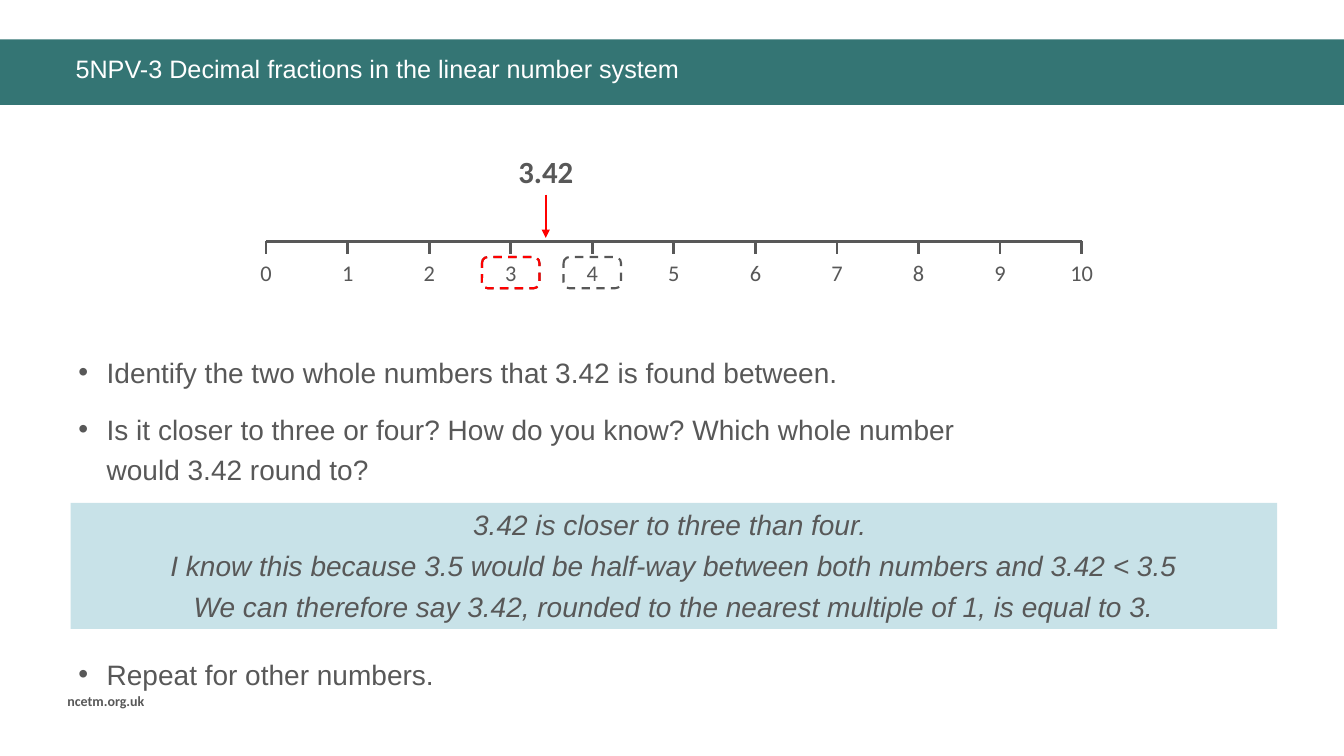
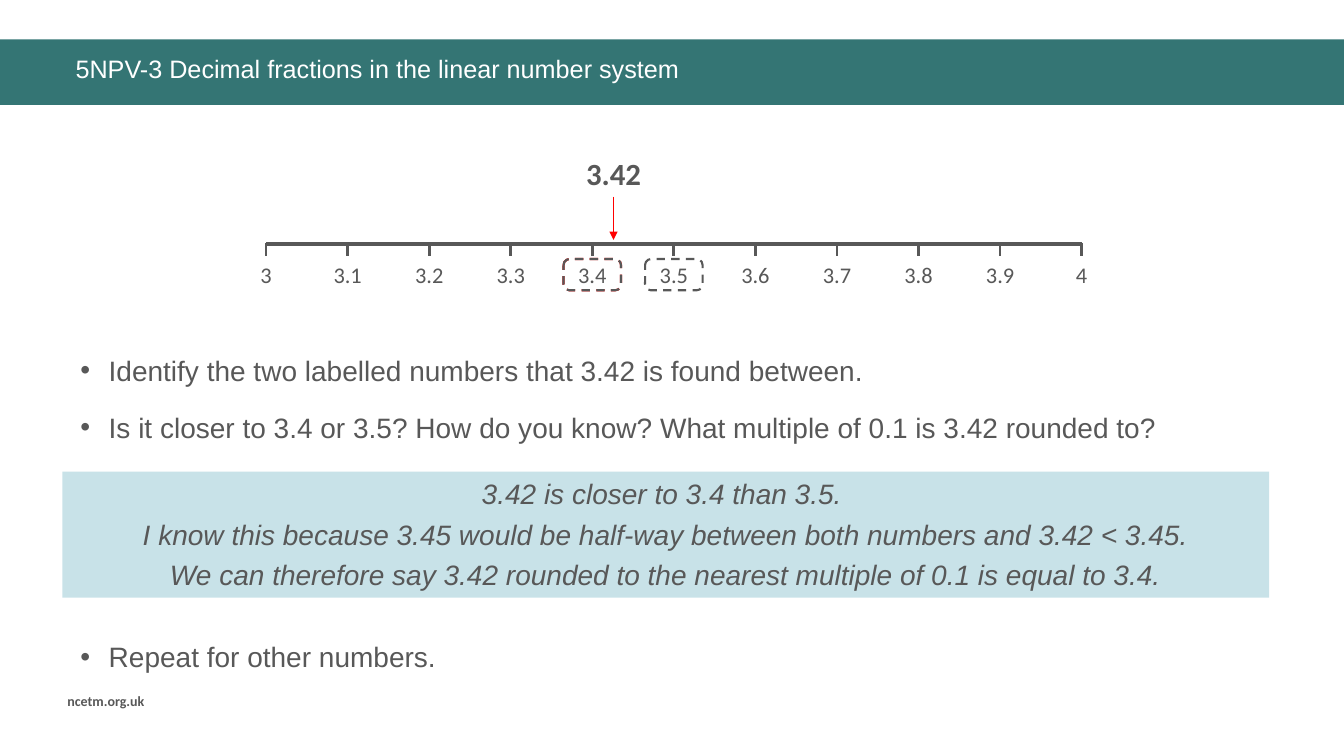
from dataclasses import dataclass

from lxml.etree import SubElement
from pptx import Presentation
from pptx.dml.color import RGBColor
from pptx.enum.dml import MSO_LINE
from pptx.enum.shapes import MSO_CONNECTOR, MSO_SHAPE
from pptx.enum.text import MSO_ANCHOR, PP_ALIGN
from pptx.oxml.ns import qn
from pptx.util import Inches, Pt


@dataclass(frozen=True)
class Theme:
    teal: str = "347574"
    pale: str = "C8E2E8"
    grey: str = "585858"
    red: str = "FF0000"
    white: str = "FFFFFF"
    sans: str = "Arial"
    label: str = "Calibri"
    title_size: int = 18
    body_size: int = 20
    pointer_size: int = 22
    tick_size: int = 16
    footer_size: int = 10


@dataclass(frozen=True)
class Box:
    """An area in inches; the areas inside it are given in percent of it."""
    left: float
    top: float
    width: float
    height: float

    def x(self, percent):
        return self.left + self.width * percent / 100

    def y(self, percent):
        return self.top + self.height * percent / 100

    def area(self, left, top, width, height):
        return Box(self.x(left), self.y(top),
                   self.width * width / 100, self.height * height / 100)

    def emu(self):
        return [Inches(v) for v in (self.left, self.top, self.width, self.height)]


THEME = Theme()
SLIDE = Box(0, 0, 13.33, 7.5)
TITLE = "5NPV-3 Decimal fractions in the linear number system"
FOOTER = "ncetm.org.uk"


def rgb(code):
    return RGBColor.from_string(code)


def write(frame, text, *, first=False, size=THEME.body_size, font=THEME.sans,
          color=THEME.grey, bold=False, italic=False, align=PP_ALIGN.LEFT,
          spacing=1.0, before=0, after=0, bullet=False):
    para = frame.paragraphs[0] if first else frame.add_paragraph()
    para.alignment = align
    para.line_spacing = spacing
    para.space_before = Pt(0 if first else before)
    para.space_after = Pt(after)
    if bullet:
        properties = para._p.get_or_add_pPr()
        properties.set("marL", str(Inches(0.28)))
        properties.set("indent", str(-Inches(0.28)))
        tint = SubElement(properties, qn("a:buClr"))
        SubElement(tint, qn("a:srgbClr"), val=THEME.grey)
        SubElement(properties, qn("a:buFont"), typeface=THEME.sans)
        SubElement(properties, qn("a:buChar"), char="•")
    span = para.add_run()
    span.text = text
    span.font.name, span.font.size = font, Pt(size)
    span.font.bold, span.font.italic = bold, italic
    span.font.color.rgb = rgb(color)


def text_frame(page, box):
    frame = page.shapes.add_textbox(*box.emu()).text_frame
    frame.word_wrap = True
    return frame


def add_panel(page, box, fill):
    panel = page.shapes.add_shape(MSO_SHAPE.RECTANGLE, *box.emu())
    panel.shadow.inherit = False
    panel.fill.solid()
    panel.fill.fore_color.rgb = rgb(fill)
    panel.line.fill.background()
    return panel


def add_line(page, start, end, color, width, arrow=False):
    points = [Inches(v) for v in (*start, *end)]
    line = page.shapes.add_connector(MSO_CONNECTOR.STRAIGHT, *points)
    line.line.color.rgb = rgb(color)
    line.line.width = Pt(width)
    properties = line._element.spPr
    if arrow:
        SubElement(properties.find(qn("a:ln")), qn("a:tailEnd"), type="triangle")
    SubElement(properties, qn("a:effectLst"))


def add_marker(page, box, color):
    marker = page.shapes.add_shape(MSO_SHAPE.ROUNDED_RECTANGLE, *box.emu())
    marker.adjustments[0] = 0.19
    marker.shadow.inherit = False
    marker.fill.background()
    marker.line.color.rgb = rgb(color)
    marker.line.width = Pt(1.5)
    marker.line.dash_style = MSO_LINE.DASH


def add_frame(page, box):
    """Title band and footer, the same on every slide."""
    add_panel(page, box.area(0, 5.2, 100, 8.67), THEME.teal)
    write(text_frame(page, box.area(4.88, 6.8, 92.4, 6.27)), TITLE, first=True,
          size=THEME.title_size, color=THEME.white, spacing=0.9)
    write(text_frame(page, box.area(4.28, 90.93, 9.08, 3.6)), FOOTER, first=True,
          size=THEME.footer_size, font=THEME.label, bold=True)


def add_number_line(page, box, labels, pointer, position, markers):
    """Number line; position and markers count in ticks from its left end."""
    step = 100 / (len(labels) - 1)

    def centred(tick, top, width, height):
        return box.area(tick * step - width / 2, top, width, height)

    # Pointer
    write(text_frame(page, centred(position, 0, 13.1, 31.33)), pointer, first=True,
          size=THEME.pointer_size, font=THEME.label, bold=True, align=PP_ALIGN.CENTER)
    across = box.x(position * step)
    add_line(page, (across, box.y(30.67)), (across, box.y(59.33)), THEME.red, 1, arrow=True)

    # Axis, ticks and labels
    add_line(page, (box.x(0), box.y(62)), (box.x(100), box.y(62)), THEME.grey, 2.25)
    for tick, label in enumerate(labels):
        across = box.x(tick * step)
        add_line(page, (across, box.y(61.33)), (across, box.y(70)), THEME.grey, 2)
        write(text_frame(page, centred(tick, 70, 10.5, 24.67)), label, first=True,
              size=THEME.tick_size, font=THEME.label, align=PP_ALIGN.CENTER)

    # Dashed markers round the neighbouring labels
    for tick, color in markers:
        add_marker(page, centred(tick, 72, 7.05, 20.67), color)


def add_questions(page, box, questions, gap):
    """Bulleted questions; the last one follows after a gap in points."""
    frame = text_frame(page, box)
    for index, question in enumerate(questions):
        last = index == len(questions) - 1
        write(frame, question, first=index == 0, spacing=1.2,
              before=gap if last else 6, after=6, bullet=True)


def add_answer(page, box, lines):
    frame = add_panel(page, box, THEME.pale).text_frame
    frame.word_wrap = True
    frame.vertical_anchor = MSO_ANCHOR.TOP
    for index, line in enumerate(lines):
        write(frame, line, first=index == 0, italic=True, before=5,
              align=PP_ALIGN.CENTER)


def add_rounding_slide(deck, line_top, number_line, questions_area, questions, gap,
                       answer_corner, answer):
    page = deck.slides.add_slide(deck.slide_layouts[6])
    add_frame(page, SLIDE)
    add_number_line(page, SLIDE.area(19.8, line_top, 60.68, 20), **number_line)
    add_questions(page, SLIDE.area(*questions_area), questions, gap)
    add_answer(page, SLIDE.area(*answer_corner, 89.78, 16.67), answer)


def main():
    deck = Presentation()
    deck.slide_width, deck.slide_height = Inches(SLIDE.width), Inches(SLIDE.height)

    # Rounding to a whole number
    add_rounding_slide(
        deck,
        line_top=19.6,
        number_line=dict(
            labels=[str(n) for n in range(11)], pointer="3.42", position=3.43,
            markers=[(3, THEME.grey), (4, THEME.grey), (3, THEME.red)]),
        questions_area=(5.1, 45.47, 72.45, 47.73),
        questions=[
            "Identify the two whole numbers that 3.42 is found between.",
            "Is it closer to three or four? How do you know? "
            "Which whole number would 3.42 round to?",
            "Repeat for other numbers."],
        gap=111,
        answer_corner=(5.25, 66.53),
        answer=[
            "3.42 is closer to three than four. ",
            "I know this because 3.5 would be half-way between both numbers and 3.42 < 3.5",
            "We can therefore say 3.42, rounded to the nearest multiple of 1, is equal to 3."])

    # Rounding to one decimal place
    add_rounding_slide(
        deck,
        line_top=19.87,
        number_line=dict(
            labels=[f"{n / 10:g}" for n in range(30, 41)], pointer="3.42", position=4.26,
            markers=[(4, THEME.red), (4, THEME.grey), (5, THEME.grey)]),
        questions_area=(5.25, 45.2, 89.78, 45.6),
        questions=[
            "Identify the two labelled numbers that 3.42 is found between.",
            "Is it closer to 3.4 or 3.5? How do you know? "
            "What multiple of 0.1 is 3.42 rounded to?",
            "Repeat for other numbers."],
        gap=129,
        answer_corner=(4.65, 62.4),
        answer=[
            "3.42 is closer to 3.4 than 3.5. ",
            "I know this because 3.45 would be half-way between both numbers and 3.42 < 3.45.",
            "We can therefore say 3.42 rounded to the nearest multiple of 0.1 is equal to 3.4."])

    deck.save("out.pptx")


if __name__ == "__main__":
    main()
